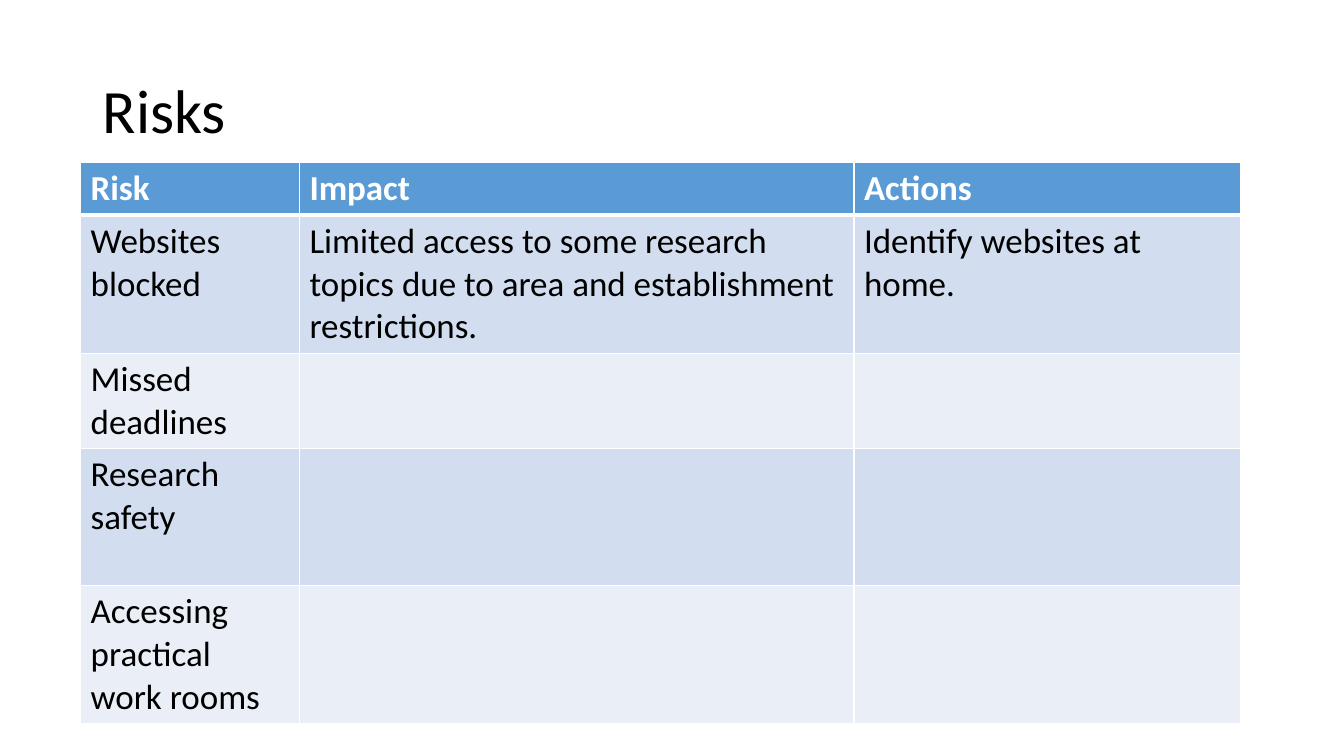
from dataclasses import dataclass

from lxml import etree
from pptx import Presentation
from pptx.dml.color import RGBColor
from pptx.enum.text import MSO_ANCHOR, MSO_AUTO_SIZE, PP_ALIGN
from pptx.oxml.ns import qn
from pptx.util import Inches, Pt

LEFT = PP_ALIGN.LEFT
MIDDLE = MSO_ANCHOR.MIDDLE
NO_FIT = MSO_AUTO_SIZE.NONE
TITLE_ONLY = 5


@dataclass(frozen=True)
class Theme:
    font: str = "Calibri"
    title_size: int = 44
    cell_size: int = 25
    ink: str = "000000"
    white: str = "FFFFFF"
    header: str = "5B9BD5"
    bands: tuple = ("D2DEEF", "EAEFF7")
    thin: int = 1
    thick: int = 3


T = Theme()


def write(tf, text, size=T.cell_size, color=T.ink, bold=False, spacing=1.0):
    p = tf.paragraphs[0]
    p.alignment = LEFT
    p.line_spacing = spacing
    r = p.add_run()
    r.text = text
    r.font.name = T.font
    r.font.size = Pt(size)
    r.font.bold = bold
    r.font.color.rgb = RGBColor.from_string(color)


def add_border(cell, side, width):
    ln = etree.SubElement(cell._tc.get_or_add_tcPr(), qn(f"a:ln{side}"), w=str(Pt(width)))
    fill = etree.SubElement(ln, qn("a:solidFill"))
    etree.SubElement(fill, qn("a:srgbClr"), val=T.white)


prs = Presentation()
prs.slide_width = Inches(13.33)
prs.slide_height = Inches(7.5)
s = prs.slides.add_slide(prs.slide_layouts[TITLE_ONLY])

title = s.shapes.title
title.left, title.top, title.width, title.height = map(Inches, (0.92, 0.4, 11.5, 1.45))
tf = title.text_frame
tf.auto_size = NO_FIT
tf.vertical_anchor = MIDDLE
write(tf, "Risks", size=T.title_size, spacing=0.9)

risks = [
    ("Risk", "Impact", "Actions"),
    ("Websites blocked",
     "Limited access to some research topics due to area and establishment restrictions.",
     "Identify websites at home."),
    ("Missed deadlines", "", ""),
    ("Research safety", "", ""),
    ("Accessing practical work rooms", "", ""),
]
col_widths = [2.17, 5.5, 3.83]
row_lines = [1, 3, 2, 3, 3]
row_heights = [0.1 + 0.42 * n for n in row_lines]

table = s.shapes.add_table(
    len(risks), len(col_widths), Inches(0.8), Inches(1.61),
    Inches(sum(col_widths)), Inches(sum(row_heights))).table
for col, width in zip(table.columns, col_widths):
    col.width = Inches(width)

for i, (row, height, texts) in enumerate(zip(table.rows, row_heights, risks)):
    row.height = Inches(height)
    is_header = i == 0
    top = T.thick if i == 1 else T.thin
    bottom = T.thick if is_header else T.thin
    background = T.header if is_header else T.bands[(i - 1) % 2]
    for cell, text in zip(row.cells, texts):
        for side, width in zip("LRTB", (T.thin, T.thin, top, bottom)):
            add_border(cell, side, width)
        cell.fill.solid()
        cell.fill.fore_color.rgb = RGBColor.from_string(background)
        if text:
            write(cell.text_frame, text, color=T.white if is_header else T.ink, bold=is_header)

prs.save("out.pptx")
